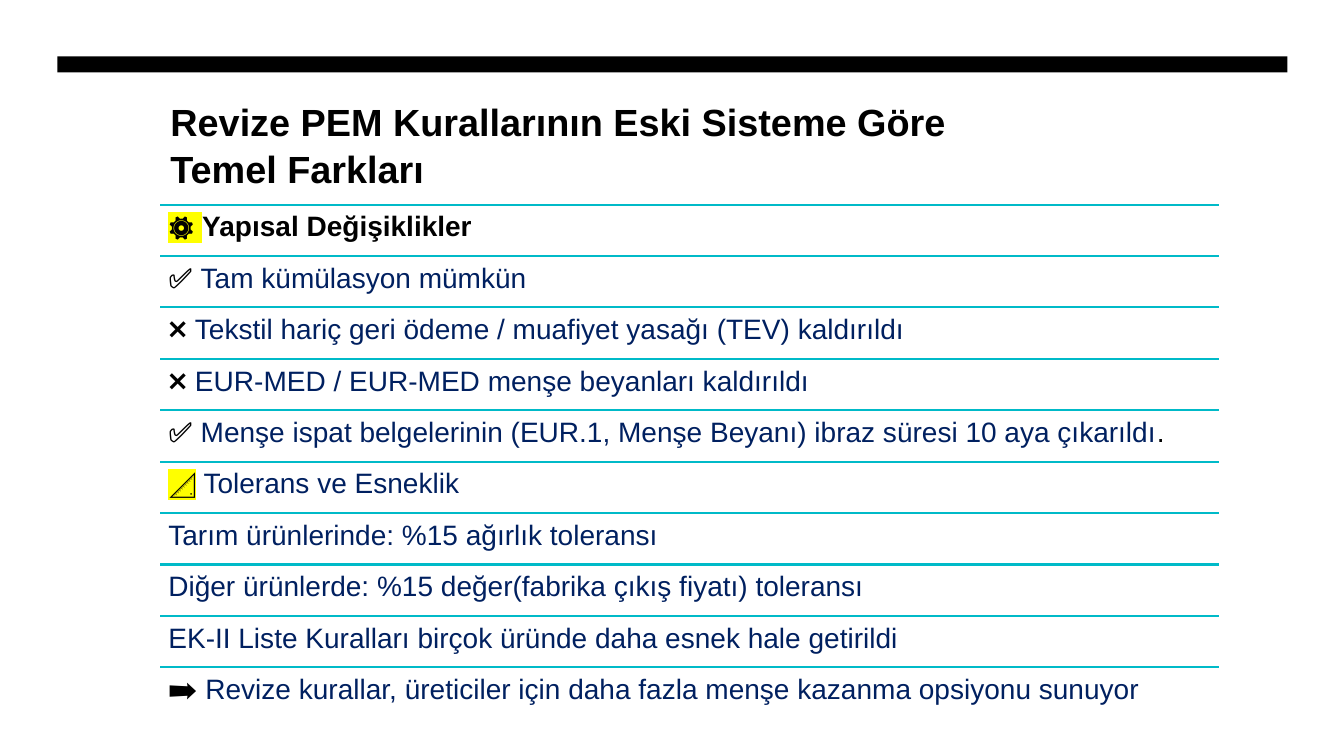
from typing import NamedTuple

from lxml.etree import SubElement
from pptx import Presentation
from pptx.dml.color import RGBColor
from pptx.enum.shapes import MSO_CONNECTOR, MSO_SHAPE
from pptx.enum.text import MSO_ANCHOR, MSO_AUTO_SIZE, PP_ALIGN
from pptx.oxml.ns import qn
from pptx.slide import Slide
from pptx.util import Inches, Pt

BLACK = RGBColor(0x00, 0x00, 0x00)
NAVY = RGBColor(0x00, 0x20, 0x60)
TEAL = RGBColor(0x00, 0xBA, 0xC8)
YELLOW = RGBColor(0xFF, 0xFF, 0x00)
FONT = "Arial"

LEFT, TOP, WIDTH, ROW_HEIGHT = 1.59, 2.03, 10.5, 0.51
INSET = Inches(0.08)


class Phrase(NamedTuple):
    text: str
    color: RGBColor = NAVY
    marked: bool = False


class Row(NamedTuple):
    phrases: list[Phrase]
    bold: bool = False


CHECK = Phrase("✅ ", BLACK)
CROSS = Phrase("❌ ", BLACK)

ROWS = [
    Row([Phrase("⚙️ ", BLACK, True), Phrase("Yapısal Değişiklikler", BLACK)], bold=True),
    Row([CHECK, Phrase("Tam kümülasyon mümkün")]),
    Row([CROSS, Phrase("Tekstil hariç geri ödeme / muafiyet yasağı (TEV) kaldırıldı")]),
    Row([CROSS, Phrase("EUR-MED / EUR-MED menşe beyanları kaldırıldı")]),
    Row([
        CHECK,
        Phrase("Menşe ispat belgelerinin (EUR.1, Menşe Beyanı) ibraz süresi 10 aya çıkarıldı"),
        Phrase(".", BLACK),
    ]),
    Row([Phrase("📐", BLACK, True), Phrase(" Tolerans ve Esneklik")]),
    Row([Phrase("Tarım ürünlerinde: %15 ağırlık toleransı")]),
    Row([Phrase("Diğer ürünlerde: %15 değer(fabrika çıkış fiyatı) toleransı")]),
    Row([Phrase("EK-II Liste Kuralları birçok üründe daha esnek hale getirildi")]),
    Row([
        Phrase("➡️ ", BLACK),
        Phrase("Revize kurallar, üreticiler için daha fazla menşe kazanma opsiyonu sunuyor"),
    ]),
]


def add_bar(s: Slide) -> None:
    sp = s.shapes.add_shape(
        MSO_SHAPE.RECTANGLE, Inches(0.57), Inches(0.56), Inches(12.2), Inches(0.16)
    )
    sp.shadow.inherit = False
    sp.fill.solid()
    sp.fill.fore_color.rgb = BLACK
    sp.line.fill.background()


def set_title(s: Slide, text: str) -> None:
    sp = s.shapes.title
    sp.left, sp.top = Inches(LEFT), Inches(0.88)
    sp.width, sp.height = Inches(WIDTH), Inches(1.15)
    tf = sp.text_frame
    tf.text = text
    tf.auto_size = MSO_AUTO_SIZE.NONE
    tf.vertical_anchor = MSO_ANCHOR.TOP
    tf.margin_top = Inches(0.09)
    p = tf.paragraphs[0]
    p.alignment = PP_ALIGN.LEFT
    p.line_spacing = 1.03
    p.font.name, p.font.size, p.font.bold = FONT, Pt(27), True
    p.font.color.rgb = BLACK


def add_rule(s: Slide, y: float) -> None:
    line = s.shapes.add_connector(
        MSO_CONNECTOR.STRAIGHT, Inches(LEFT), Inches(y), Inches(LEFT + WIDTH), Inches(y)
    )
    line.line.color.rgb = TEAL
    line.line.width = Pt(1.5)
    SubElement(line._element.spPr, qn("a:effectLst"))


def add_row(s: Slide, row: Row, y: float) -> None:
    sp = s.shapes.add_textbox(Inches(LEFT), Inches(y), Inches(WIDTH), Inches(ROW_HEIGHT))
    tf = sp.text_frame
    tf.word_wrap = True
    tf.margin_left = tf.margin_right = tf.margin_top = tf.margin_bottom = INSET
    p = tf.paragraphs[0]
    p.line_spacing = 0.9
    p.font.name, p.font.size, p.font.bold = FONT, Pt(20), row.bold
    for phrase in row.phrases:
        r = p.add_run()
        r.text = phrase.text
        r.font.color.rgb = phrase.color
        if phrase.marked:
            highlight = SubElement(r._r.get_or_add_rPr(), qn("a:highlight"))
            SubElement(highlight, qn("a:srgbClr"), val=str(YELLOW))


def main() -> None:
    prs = Presentation()
    prs.slide_width, prs.slide_height = Inches(13.33), Inches(7.5)
    s = prs.slides.add_slide(prs.slide_layouts[5])

    # Heading
    add_bar(s)
    set_title(s, "Revize PEM Kurallarının Eski Sisteme Göre\vTemel Farkları")

    # Ruled list
    for i, row in enumerate(ROWS):
        y = TOP + i * ROW_HEIGHT
        add_rule(s, y)
        add_row(s, row, y)

    prs.save("out.pptx")


if __name__ == "__main__":
    main()
